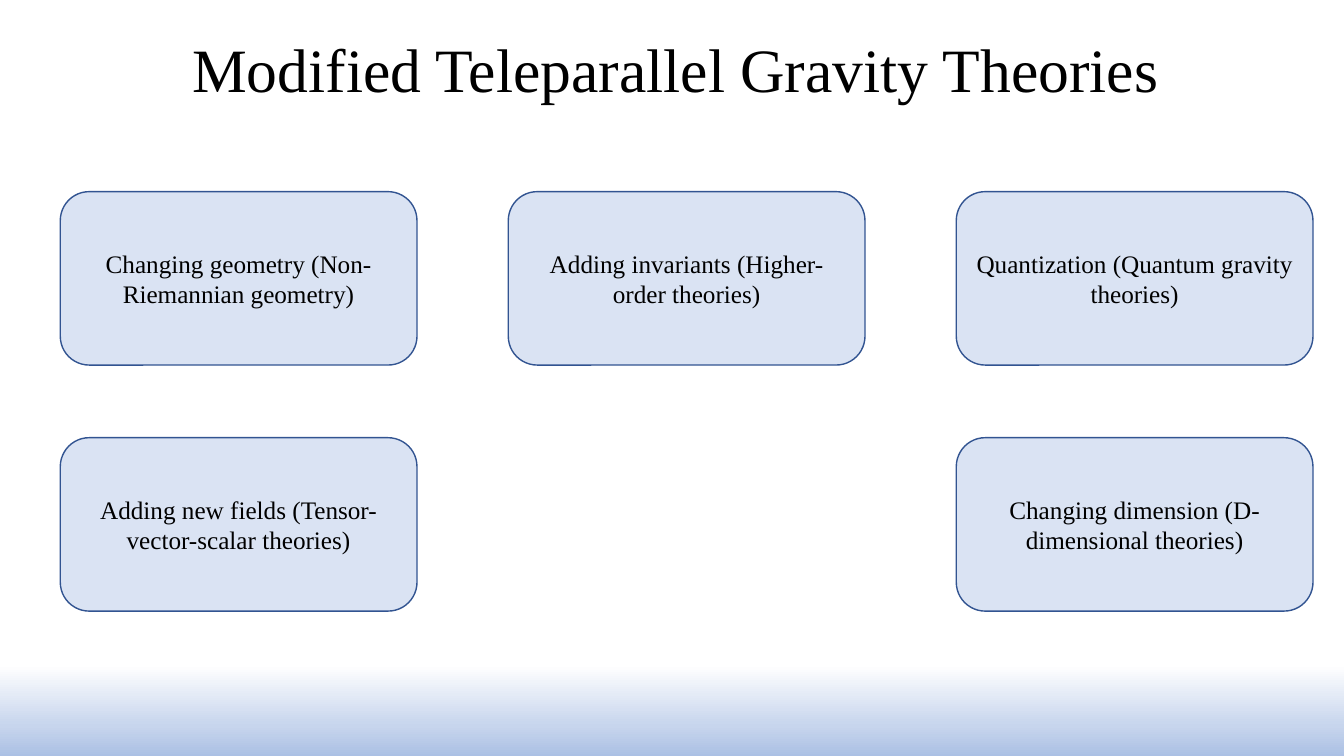
from dataclasses import dataclass

from lxml import etree
from pptx import Presentation
from pptx import util as u
from pptx.dml.color import RGBColor
from pptx.enum import shapes, text
from pptx.oxml import ns


@dataclass(frozen=True)
class Theme:
    font: str = "Times New Roman"
    ink: str = "000000"
    fill: str = "DAE3F3"
    edge: str = "325491"
    head: int = 44
    body: int = 18
    fade: tuple = ((83, "FFFFFF"), (88, "FFFFFF"), (96, "C7D5ED"), (100, "ABC0E4"))


theme = Theme()


def write(frame, words, size):
    frame.word_wrap = True
    frame.vertical_anchor = text.MSO_ANCHOR.MIDDLE
    para = frame.paragraphs[0]
    para.alignment = text.PP_ALIGN.CENTER
    run = para.add_run()
    run.text = words
    run.font.name = theme.font
    run.font.size = u.Pt(size)
    run.font.color.rgb = RGBColor.from_string(theme.ink)
    return para


deck = Presentation()
deck.slide_width = u.Cm(33.87)
deck.slide_height = u.Cm(19.05)
slide = deck.slides.add_slide(deck.slide_layouts[5])

back = slide.background.fill
back.gradient()
back.gradient_angle = 270
stops = slide.element.find(".//" + ns.qn("a:gsLst"))
for stop in list(stops):
    stops.remove(stop)
for place, color in theme.fade:
    stop = etree.SubElement(stops, ns.qn("a:gs"), pos=str(place * 1000))
    etree.SubElement(stop, ns.qn("a:srgbClr"), val=color)

title = slide.shapes.title
title.left, title.top = u.Cm(0.64), u.Cm(0.66)
title.width, title.height = u.Cm(32.79), u.Cm(2.34)
write(title.text_frame, "Modified Teleparallel Gravity Theories", theme.head).line_spacing = 0.9

cards = (
    (0, 0, "Changing geometry (Non-Riemannian geometry)"),
    (1, 0, "Adding invariants (Higher-order theories)"),
    (2, 0, "Quantization (Quantum gravity theories)"),
    (0, 1, "Adding new fields (Tensor-vector-scalar theories)"),
    (2, 1, "Changing dimension (D-dimensional theories)"),
)
for col, row, words in cards:
    card = slide.shapes.add_shape(
        shapes.MSO_SHAPE.ROUNDED_RECTANGLE,
        u.Cm(1.52 + 11.29 * col), u.Cm(4.83 + 6.2 * row), u.Cm(8.99), u.Cm(4.37),
    )
    card.shadow.inherit = False
    card.fill.solid()
    card.fill.fore_color.rgb = RGBColor.from_string(theme.fill)
    card.line.color.rgb = RGBColor.from_string(theme.edge)
    card.line.width = u.Pt(1)
    write(card.text_frame, words, theme.body)

deck.save("out.pptx")
